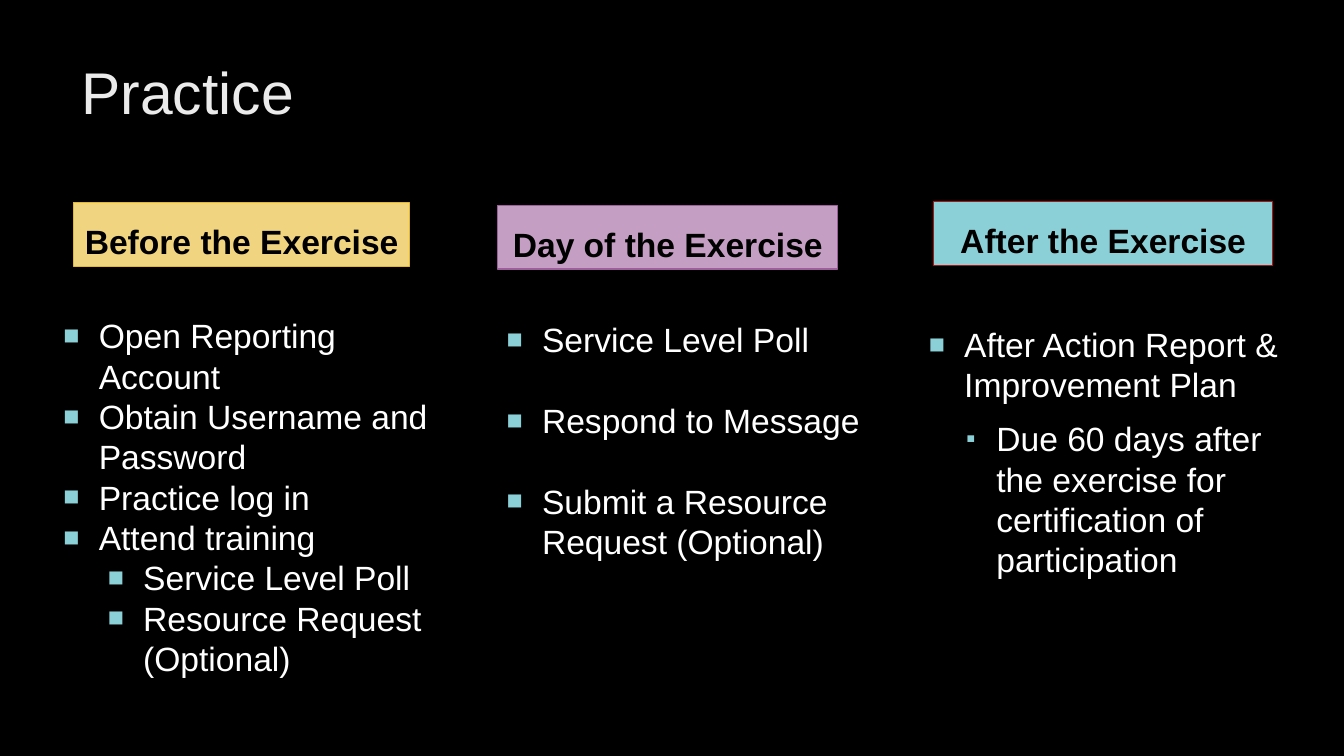
"""Build the Practice slide: three exercise phases with bulleted steps."""
import pptx
import pptx.dml.color
import pptx.enum.shapes
import pptx.enum.text
import pptx.oxml
import pptx.oxml.ns
import pptx.util

Cm, Pt = pptx.util.Cm, pptx.util.Pt
ALIGN, ANCHOR = pptx.enum.text.PP_ALIGN, pptx.enum.text.MSO_ANCHOR


def color(value):
    """Turn a hex string into a colour."""
    return pptx.dml.color.RGBColor.from_string(value)


def write(para, text, size, ink, bold=False):
    """Add one formatted span to a paragraph."""
    span = para.add_run()
    span.text = text
    span.font.color.rgb = color(ink)
    for name, value in {"name": "Arial", "size": Pt(size), "bold": bold}.items():
        setattr(span.font, name, value)


LEVELS = {
    "main": {"lvl": 0, "left": 1.22, "hang": 0.89, "mark": "■"},
    "sub": {"lvl": 1, "left": 2.34, "hang": 0.89, "mark": "■"},
    "small": {"lvl": 1, "left": 2.03, "hang": 0.76, "mark": "▪"},
}
PHASES = [
    {"heading": "Before the Exercise", "fill": "F0D47F", "line": "E6B729",
     "label": (1.85, 5.11, 8.48, 1.6), "list": (1.02, 7.82), "gap": 0,
     "steps": [("main", "Open Reporting Account"),
               ("main", "Obtain Username and Password"),
               ("main", "Practice log in"),
               ("main", "Attend training"),
               ("sub", "Service Level Poll"),
               ("sub", "Resource Request (Optional)")]},
    {"heading": "Day of the Exercise", "fill": "C59EC3", "line": "9E5E9B",
     "label": (12.55, 5.18, 8.56, 1.6), "list": (12.19, 7.92), "gap": 28.8,
     "steps": [("main", "Service Level Poll"),
               ("main", "Respond to Message"),
               ("main", "Submit a Resource Request (Optional)")]},
    {"heading": "After the Exercise", "fill": "8AD0D6", "line": "B01513",
     "label": (23.52, 5.08, 8.56, 1.6), "list": (22.83, 8.03), "gap": 10,
     "steps": [("main", "After Action Report & Improvement Plan"),
               ("small", "Due 60 days after the exercise for certification of participation")]},
]

deck = pptx.Presentation()
deck.slide_width, deck.slide_height = Cm(33.87), Cm(19.05)
page = deck.slides.add_slide(deck.slide_layouts[5])
page.background.fill.solid()
page.background.fill.fore_color.rgb = color("000000")

title = page.shapes.title
for name, value in {"left": 1.8, "top": 1.27, "width": 26.14, "height": 3.89}.items():
    setattr(title, name, Cm(value))
title.text_frame.auto_size = pptx.enum.text.MSO_AUTO_SIZE.NONE
title.text_frame.vertical_anchor = ANCHOR.TOP
title.text_frame.paragraphs[0].alignment = ALIGN.LEFT
write(title.text_frame.paragraphs[0], "Practice", 42, "EBEBEB")

for phase in PHASES:
    label = page.shapes.add_shape(pptx.enum.shapes.MSO_SHAPE.RECTANGLE, *map(Cm, phase["label"]))
    label.shadow.inherit = False
    label.fill.solid()
    label.fill.fore_color.rgb = color(phase["fill"])
    label.line.color.rgb = color(phase["line"])
    label.line.width = Pt(0.75)
    label.text_frame.vertical_anchor = ANCHOR.BOTTOM
    label.text_frame.word_wrap = True
    para = label.text_frame.paragraphs[0]
    para.alignment = ALIGN.CENTER
    write(para, phase["heading"], 24, "000000", bold=True)

    box = page.shapes.add_textbox(*map(Cm, phase["list"]), Cm(10.16), Cm(8.86))
    box.text_frame.word_wrap = True
    for number, (kind, text) in enumerate(phase["steps"]):
        level = LEVELS[kind]
        para = box.text_frame.add_paragraph() if number else box.text_frame.paragraphs[0]
        para.level = level["lvl"]
        properties = para._p.get_or_add_pPr()
        properties.set("marL", str(Cm(level["left"])))
        properties.set("indent", str(-Cm(level["hang"])))
        for bullet in ('<a:buClr %s><a:srgbClr val="8AD0D6"/></a:buClr>',
                       '<a:buSzPct %s val="80000"/>',
                       '<a:buFont %s typeface="Arial"/>',
                       '<a:buChar %s char="' + level["mark"] + '"/>'):
            properties.append(pptx.oxml.parse_xml(bullet % pptx.oxml.ns.nsdecls("a")))
        para.space_before = Pt(phase["gap"] if number else 0)
        write(para, text, 24, "FFFFFF")

deck.save("out.pptx")
